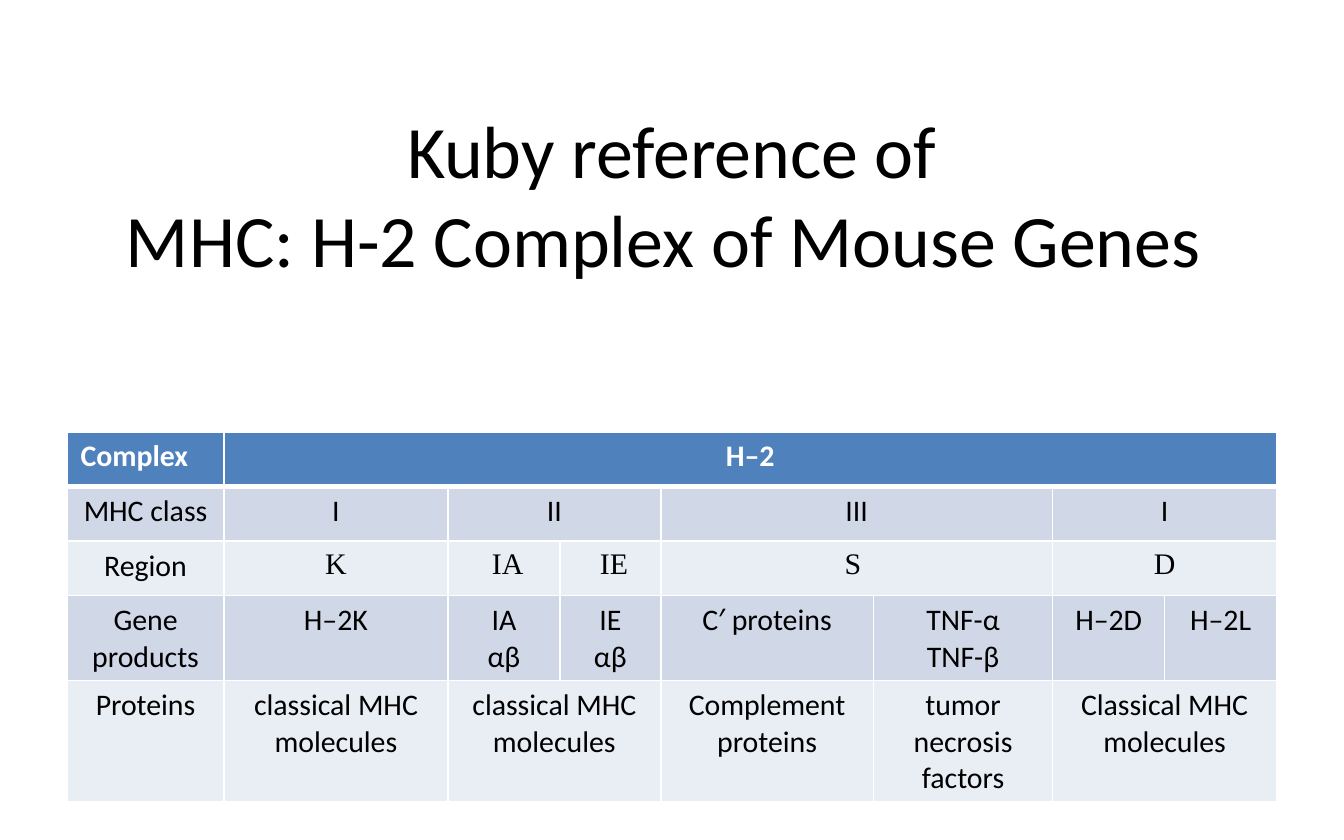
from dataclasses import dataclass

from lxml import etree
from pptx import Presentation
from pptx import util as u
from pptx.dml.color import RGBColor
from pptx.enum import text
from pptx.oxml.ns import qn


@dataclass(frozen=True)
class Theme:
    body_font: str = "Calibri"
    region_font: str = "Times New Roman"
    title_size: float = 39.6
    cell_size: float = 16
    ink: str = "000000"
    white: str = "FFFFFF"
    header: str = "4F81BD"
    bands: tuple = ("D0D8E8", "E9EDF4")
    rule: float = 1
    header_rule: float = 3


THEME = Theme()
WIDTH, HEIGHT = u.Inches(10), u.Inches(6.25)
MARGIN = 0.05                                  # share of the slide's width
TITLE_TOP, TITLE_HEIGHT = 0.147, 0.166         # shares of the slide's height
TABLE_TOP, ROW_HEIGHT = 0.514, 0.065
COLUMNS = (14, 20, 10, 9, 19, 16, 10, 10)      # column widths in grid units

TITLE = ("Kuby reference of", "MHC: H-2 Complex of Mouse Genes ")
# Each cell is its text and the number of columns it covers
ROWS = (
    (("Complex", 1), ("H–2", 7)),
    (("MHC class", 1), ("I", 1), ("II", 2), ("III", 2), ("I", 2)),
    (("Region", 1), ("K", 1), (" IA", 1), (" IE", 1), ("S ", 2), ("D", 2)),
    (("Gene\nproducts", 1), ("H–2K", 1), ("IA\nαβ", 1), ("IE\nαβ", 1),
     ("C′ proteins", 1), ("TNF-α\nTNF-β", 1), ("H–2D", 1), ("H–2L", 1)),
    (("Proteins", 1), ("classical MHC molecules", 1),
     ("classical MHC molecules", 2), ("Complement proteins", 1),
     ("tumor necrosis factors", 1), ("Classical MHC molecules", 2)),
)
HEADER_ROW, REGION_ROW = 0, 2


def add_run(p, words, size, color, font=THEME.body_font, bold=False):
    r = p.add_run()
    r.text = words
    r.font.size, r.font.name, r.font.bold = u.Pt(size), font, bold
    r.font.color.rgb = RGBColor.from_string(color)


def add_title(slide, lines):
    sp = slide.shapes.add_textbox(
        int(WIDTH * MARGIN), int(HEIGHT * TITLE_TOP),
        int(WIDTH * (1 - 2 * MARGIN)), int(HEIGHT * TITLE_HEIGHT))
    tf = sp.text_frame
    tf.word_wrap = True
    tf.vertical_anchor = text.MSO_ANCHOR.MIDDLE
    p = tf.paragraphs[0]
    p.alignment = text.PP_ALIGN.CENTER
    for i, line in enumerate(lines):
        if i:
            p.add_line_break()
        add_run(p, line, THEME.title_size, THEME.ink)


def set_borders(cell, top, bottom):
    tc_pr = cell._tc.get_or_add_tcPr()
    widths = {"L": THEME.rule, "R": THEME.rule, "T": top, "B": bottom}
    for side, width in widths.items():
        ln = etree.SubElement(tc_pr, qn(f"a:ln{side}"), w=str(u.Pt(width)))
        fill = etree.SubElement(ln, qn("a:solidFill"))
        etree.SubElement(fill, qn("a:srgbClr"), val=THEME.white)


def style_cell(cell, row):
    # Borders go in before the fill, as the schema orders them
    heavy, thin = THEME.header_rule, THEME.rule
    set_borders(cell, heavy if row == HEADER_ROW + 1 else thin,
                heavy if row == HEADER_ROW else thin)
    color = THEME.header if row == HEADER_ROW else THEME.bands[(row - 1) % 2]
    cell.fill.solid()
    cell.fill.fore_color.rgb = RGBColor.from_string(color)


def write_cell(cell, words, row, col):
    header = row == HEADER_ROW
    region = row == REGION_ROW and col > 0
    tf = cell.text_frame
    for i, line in enumerate(words.split("\n")):
        p = tf.add_paragraph() if i else tf.paragraphs[0]
        if not header or col > 0:
            p.alignment = text.PP_ALIGN.CENTER
        add_run(p, line, THEME.cell_size, THEME.white if header else THEME.ink,
                THEME.region_font if region else THEME.body_font, header)


def add_gene_table(slide, rows):
    width, row_height = int(WIDTH * (1 - 2 * MARGIN)), int(HEIGHT * ROW_HEIGHT)
    table = slide.shapes.add_table(
        len(rows), len(COLUMNS), int(WIDTH * MARGIN), int(HEIGHT * TABLE_TOP),
        width, row_height * len(rows)).table
    for column, units in zip(table.columns, COLUMNS):
        column.width = width * units // sum(COLUMNS)
    for row, cells in enumerate(rows):
        for col in range(len(COLUMNS)):
            style_cell(table.cell(row, col), row)
        col = 0
        for words, span in cells:
            cell = table.cell(row, col)
            if span > 1:
                cell.merge(table.cell(row, col + span - 1))
            write_cell(cell, words, row, col)
            col += span


def main():
    prs = Presentation()
    prs.slide_width, prs.slide_height = WIDTH, HEIGHT
    slide = prs.slides.add_slide(prs.slide_layouts[6])
    add_title(slide, TITLE)
    add_gene_table(slide, ROWS)
    prs.save("out.pptx")


if __name__ == "__main__":
    main()
